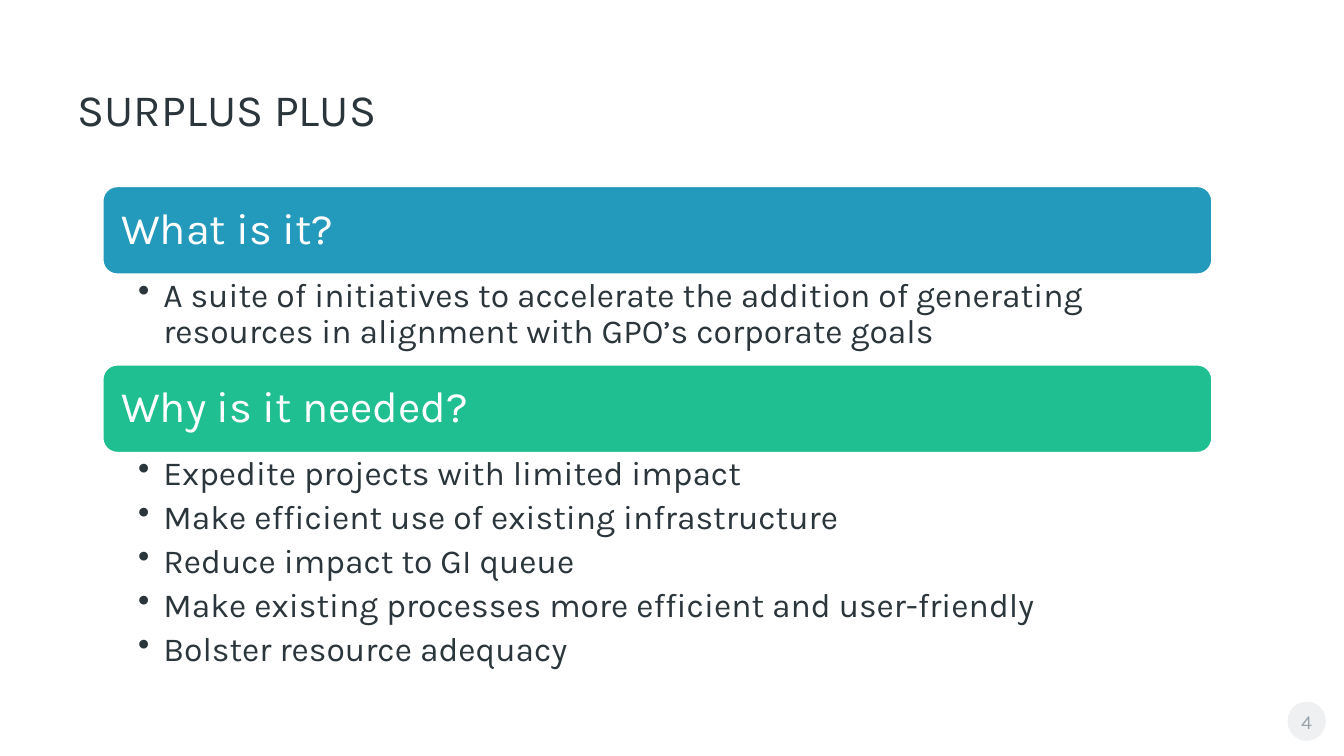
from dataclasses import dataclass

from lxml.etree import SubElement
from pptx import Presentation
from pptx.dml.color import RGBColor
from pptx.enum.shapes import MSO_SHAPE
from pptx.enum.text import MSO_ANCHOR, PP_ALIGN
from pptx.oxml.ns import qn
from pptx.util import Inches, Pt


@dataclass(frozen=True)
class Theme:
    font: str = "Karla"
    ink: str = "2A363B"
    white: str = "FFFFFF"
    blue: str = "2399BB"
    green: str = "1FBF92"
    badge: str = "EEF0F1"
    muted: str = "99A4AD"
    title_size: int = 32
    heading_size: int = 31
    body_size: int = 24
    number_size: int = 14


theme = Theme()


def write(frame, lines, size, color, insets=(0.1, 0.05, 0.1, 0.05),
          anchor=MSO_ANCHOR.MIDDLE, align=PP_ALIGN.LEFT, spacing=0.9,
          after=0, bullet=False):
    frame.word_wrap = True
    frame.vertical_anchor = anchor
    (frame.margin_left, frame.margin_top,
     frame.margin_right, frame.margin_bottom) = map(Inches, insets)
    for index, line in enumerate(lines):
        paragraph = frame.paragraphs[0] if index == 0 else frame.add_paragraph()
        paragraph.alignment = align
        paragraph.line_spacing = spacing
        paragraph.space_before = Pt(0)
        paragraph.space_after = Pt(after)
        if bullet:
            properties = paragraph._p.get_or_add_pPr()
            properties.set("marL", str(Inches(0.25)))
            properties.set("indent", str(Inches(-0.25)))
            SubElement(properties, qn("a:buChar")).set("char", "•")
        run = paragraph.add_run()
        run.text = line
        run.font.name = theme.font
        run.font.size = Pt(size)
        run.font.color.rgb = RGBColor.from_string(color)


presentation = Presentation()
presentation.slide_width = Inches(13.33)
presentation.slide_height = Inches(7.5)
slide = presentation.slides.add_slide(presentation.slide_layouts[5])

title = slide.shapes.title
title.left, title.top = Inches(0.67), Inches(0.62)
title.width, title.height = Inches(11.97), Inches(1.03)
write(title.text_frame, ["SURPLUS PLUS"], theme.title_size, theme.ink, spacing=0.75)

sections = [
    ("What is it?", theme.blue, 0.9, [
        "A suite of initiatives to accelerate the addition of generating "
        "resources in alignment with GPO’s corporate goals",
    ]),
    ("Why is it needed?", theme.green, 2.46, [
        "Expedite projects with limited impact",
        "Make efficient use of existing infrastructure",
        "Reduce impact to GI queue",
        "Make existing processes more efficient and user-friendly",
        "Bolster resource adequacy",
    ]),
]
left, width, heading_height = Inches(1.02), Inches(11), Inches(0.87)
top = Inches(1.85)

for question, color, answer_height, answers in sections:
    heading = slide.shapes.add_shape(
        MSO_SHAPE.ROUNDED_RECTANGLE, left, top, width, heading_height)
    heading.shadow.inherit = False
    heading.fill.solid()
    heading.fill.fore_color.rgb = RGBColor.from_string(color)
    heading.line.color.rgb = RGBColor.from_string(theme.white)
    heading.line.width = Pt(1)
    write(heading.text_frame, [question], theme.heading_size, theme.white,
          insets=(0.14, 0.05, 0.14, 0.05))
    top += heading_height

    answer = slide.shapes.add_textbox(left, top, width, Inches(answer_height))
    write(answer.text_frame, answers, theme.body_size, theme.ink,
          insets=(0.35, 0.04, 0.24, 0.04), anchor=MSO_ANCHOR.TOP,
          after=5.5, bullet=True)
    top += Inches(answer_height)

page_number = slide.shapes.add_shape(
    MSO_SHAPE.OVAL, Inches(12.77), Inches(6.96), Inches(0.38), Inches(0.39))
page_number.shadow.inherit = False
page_number.fill.solid()
page_number.fill.fore_color.rgb = RGBColor.from_string(theme.badge)
page_number.line.fill.background()
write(page_number.text_frame, ["4"], theme.number_size, theme.muted,
      insets=(0, 0, 0, 0), align=PP_ALIGN.CENTER, spacing=1.0)

presentation.save("out.pptx")
